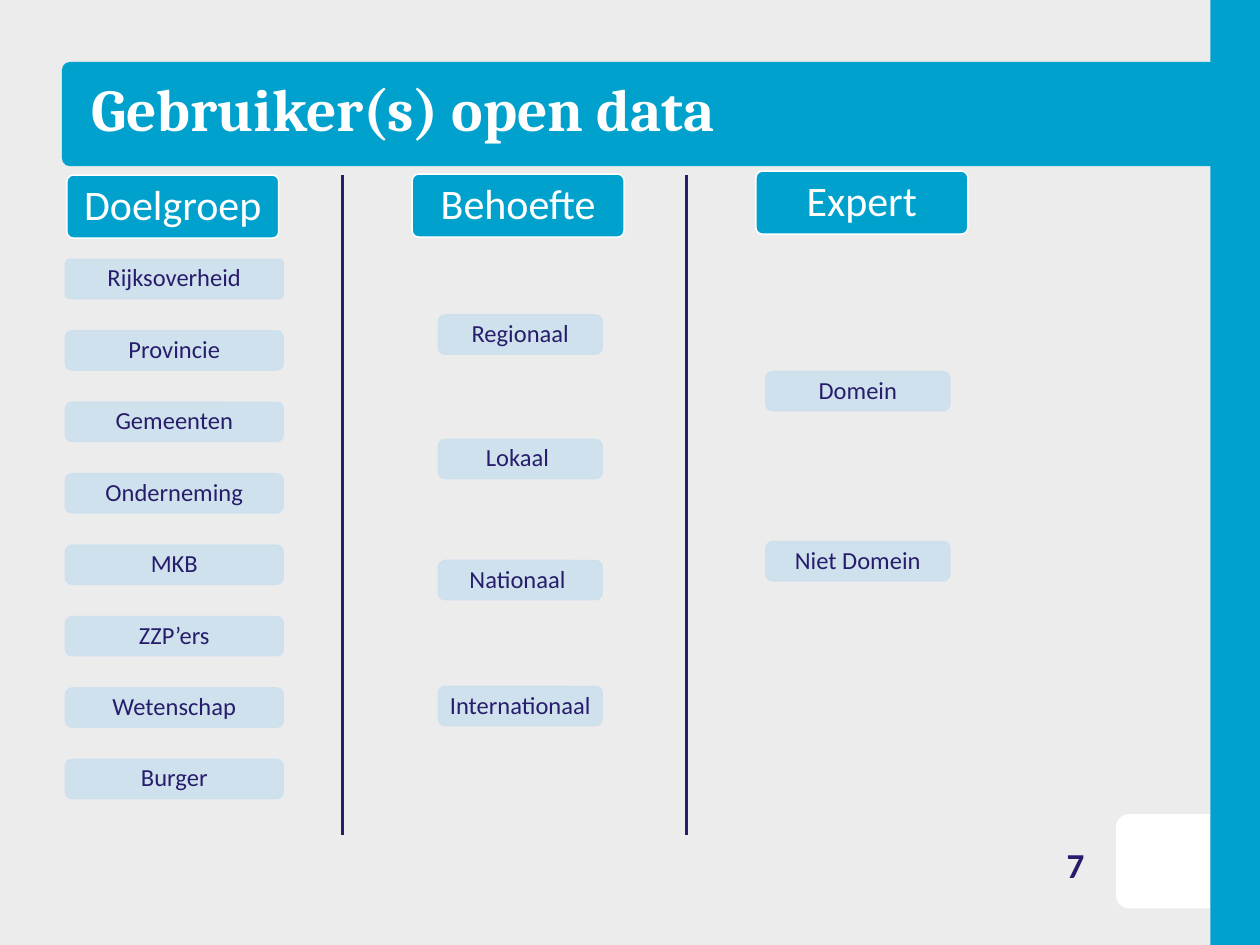
"""Build the slide on open data users: target group, need and expertise."""
from lxml import etree
from pptx import Presentation
from pptx import util as u
from pptx.dml.color import RGBColor
from pptx.enum import shapes, text
from pptx.oxml.ns import qn

COLOURS = {"background": "ECECEC", "blue": "00A1CD", "pale": "CCE0ED", "navy": "271D6C", "white": "FFFFFF"}
Kind = shapes.MSO_SHAPE
Align = text.PP_ALIGN
Anchor = text.MSO_ANCHOR


def add_box(kind, box, fill, line=None, corner=None, opacity=100):
    shape = slide.shapes.add_shape(kind, *[u.Cm(value) for value in box])
    shape.shadow.inherit = False
    shape.fill.solid()
    shape.fill.fore_color.rgb = RGBColor.from_string(COLOURS[fill])
    if line:
        shape.line.width = u.Pt(0.85)
        shape.line.color.rgb = RGBColor.from_string(COLOURS[line])
    else:
        shape.line.fill.background()
    if corner is not None:
        shape.adjustments[0] = corner
    if opacity < 100:
        for colour in shape._element.spPr.iter(qn("a:srgbClr")):
            etree.SubElement(colour, qn("a:alpha")).set("val", str(opacity * 1000))
    return shape


def write(shape, words, colour, insets, frame_format, paragraph_format, font_format):
    frame = shape.text_frame
    frame.word_wrap = True
    for side, inset in zip(("left", "top", "right", "bottom"), insets):
        setattr(frame, f"margin_{side}", u.Cm(inset))
    paragraph = frame.paragraphs[0]
    paragraph.text = words
    font = paragraph.runs[0].font
    font.color.rgb = RGBColor.from_string(COLOURS[colour])
    for target, values in ((frame, frame_format), (paragraph, paragraph_format), (font, font_format)):
        for name, value in values.items():
            setattr(target, name, value)


presentation = Presentation()
presentation.slide_width = u.Cm(25.4)
presentation.slide_height = u.Cm(19.05)
slide = presentation.slides.add_slide(presentation.slide_layouts[6])
slide.background.fill.solid()
slide.background.fill.fore_color.rgb = RGBColor.from_string(COLOURS["background"])

corner_tab = add_box(Kind.ROUND_2_SAME_RECTANGLE, (22.5, 16.41, 1.9, 1.9), "white", corner=0.136)
corner_tab.rotation = 270
add_box(Kind.RECTANGLE, (24.4, 0, 1, 19.05), "blue")
add_box(Kind.ROUNDED_RECTANGLE, (1.25, 1.25, 23.85, 2.1), "blue", corner=0.075)

title = slide.shapes.add_textbox(u.Cm(1.6), u.Cm(1.25), u.Cm(23.06), u.Cm(2.1))
write(title, "Gebruiker(s) open data", "white", (0.25, 0.2, 0.25, 0.13),
      {"vertical_anchor": Anchor.TOP}, {"alignment": Align.LEFT},
      {"name": "Cambria", "size": u.Pt(34), "bold": True})
page_number = slide.shapes.add_textbox(u.Cm(20.29), u.Cm(16.84), u.Cm(1.57), u.Cm(1.19))
write(page_number, "7", "navy", (0, 0, 0, 0),
      {"vertical_anchor": Anchor.MIDDLE}, {"alignment": Align.RIGHT},
      {"name": "Calibri", "size": u.Pt(20), "bold": True})

columns = [
    ("Doelgroep", 1.35, 3.53, 1.32, 4.39, [5.23 + 1.44 * row for row in range(8)],
     ["Rijksoverheid", "Provincie", "Gemeenten", "Onderneming", "MKB", "ZZP’ers", "Wetenschap", "Burger"]),
    ("Behoefte", 8.31, 3.51, 8.84, 3.3, [6.35, 8.86, 11.3, 13.84],
     ["Regionaal", "Lokaal ", "Nationaal ", "Internationaal"]),
    ("Expert", 15.24, 3.45, 15.44, 3.71, [7.49, 10.92], ["Domein", "Niet Domein"]),
]
centred = {"alignment": Align.CENTER, "line_spacing": 0.9}
middle = {"vertical_anchor": Anchor.MIDDLE}
for heading, heading_left, heading_top, left, width, tops, labels in columns:
    header = add_box(Kind.ROUNDED_RECTANGLE, (heading_left, heading_top, 4.27, 1.27), "blue", "white", 0.1)
    write(header, heading, "white", (0.18,) * 4, middle, centred, {"name": "Calibri", "size": u.Pt(24)})
    for top, label in zip(tops, labels):
        corner = 0.1 if label == "Rijksoverheid" else None
        pill = add_box(Kind.ROUNDED_RECTANGLE, (left, top, width, 0.79), "pale", "pale", corner, 90)
        write(pill, label, "navy", (0.05,) * 4, middle, centred, {"name": "Calibri", "size": u.Pt(14)})

for x in (6.91, 13.84):
    divider = slide.shapes.add_connector(shapes.MSO_CONNECTOR.STRAIGHT, u.Cm(x), u.Cm(3.53), u.Cm(x), u.Cm(16.84))
    divider.line.width = u.Pt(1.5)
    divider.line.color.rgb = RGBColor.from_string(COLOURS["navy"])
    etree.SubElement(divider._element.spPr, qn("a:effectLst"))

presentation.save("out.pptx")
